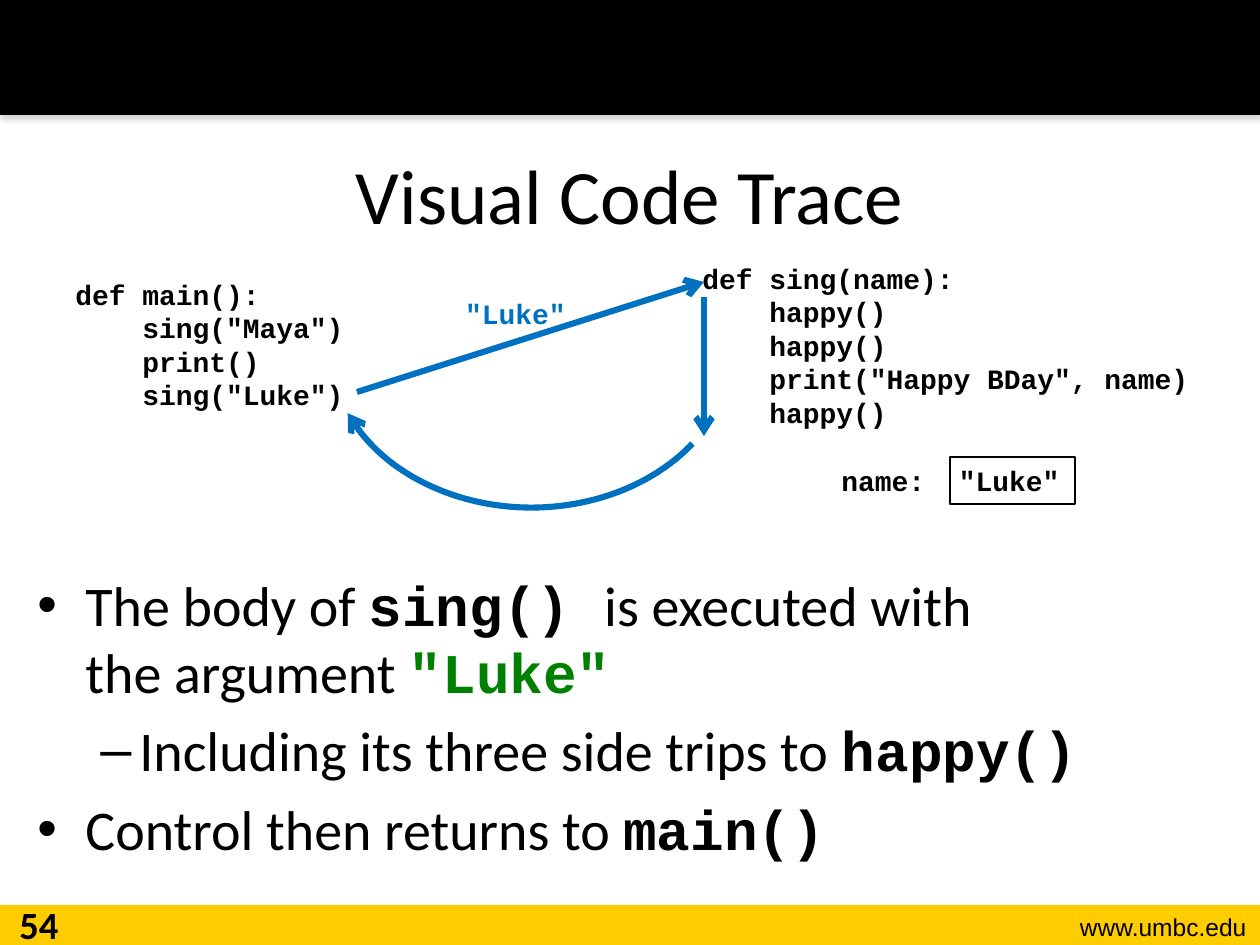
from dataclasses import dataclass
from typing import Any

from lxml.etree import SubElement
from pptx import Presentation
from pptx.dml.color import RGBColor
from pptx.enum.shapes import MSO_CONNECTOR, MSO_SHAPE
from pptx.enum.text import MSO_ANCHOR, PP_ALIGN
from pptx.oxml.ns import qn
from pptx.util import Emu, Pt

PX_PER_INCH = 126
BLACK, BLUE, GREEN, GOLD = "000000", "0070C0", "008000", "FFCC00"
CODE, PROSE = "Courier New", "Calibri"
Box = tuple[int, int, int, int]
Point = tuple[int, int]


@dataclass
class Label:
    """A text box whose lines share one style."""
    box: Box
    text: str
    size: int = 16
    font: str = CODE
    bold: bool = True
    color: str = BLACK
    align: PP_ALIGN = PP_ALIGN.LEFT
    anchor: MSO_ANCHOR = MSO_ANCHOR.TOP


@dataclass
class Span:
    """A stretch of bullet text, in prose or in code style."""
    text: str
    code: bool = False
    color: str = BLACK


@dataclass
class Bullet:
    """A bullet point with its level and spans."""
    level: int
    spans: list[Span]


LABELS = [
    Label((1008, 906, 251, 43), "www.umbc.edu", 14, "Arial", False, align=PP_ALIGN.RIGHT),
    Label((63, 115, 1134, 158), "Visual Code Trace", 44, PROSE, False,
          align=PP_ALIGN.CENTER, anchor=MSO_ANCHOR.MIDDLE),
    Label((0, 895, 78, 50), "54", 22, PROSE, align=PP_ALIGN.CENTER),
    Label((63, 271, 353, 149),
          'def main():\n    sing("Maya")\n    print()\n    sing("Luke")'),
    Label((690, 255, 559, 183),
          'def sing(name):\n    happy()\n    happy()\n'
          '    print("Happy BDay", name)\n    happy()'),
    Label((427, 290, 151, 47), '"Luke"', color=BLUE, align=PP_ALIGN.RIGHT),
]
NAME = Label((829, 457, 121, 47), "name:")
VALUE = Label((950, 457, 125, 47), '"Luke"', anchor=MSO_ANCHOR.MIDDLE)
CALLS = [((357, 392), (704, 282)), ((704, 297), (704, 436))]
BULLET_STYLES = [("•", 48, 48), ("–", 102, 39)]
BULLETS = [
    Bullet(0, [Span("The body of "), Span("sing() ", True),
               Span("is executed with\vthe argument "), Span('"Luke"', True, GREEN)]),
    Bullet(1, [Span("Including its three side trips to "), Span("happy()", True)]),
    Bullet(0, [Span("Control then returns to "), Span("main()", True)]),
]


def px(length: int) -> Emu:
    """Turn px into EMU."""
    return Emu(round(length * 914400 / PX_PER_INCH))


def rgb(value: str) -> RGBColor:
    """Turn a hex string into a colour."""
    return RGBColor.from_string(value)


def style_font(font: Any, name: str, size: int, bold: bool, color: str) -> None:
    """Set typeface, size, weight and colour."""
    font.name, font.size, font.bold = name, Pt(size), bold
    font.color.rgb = rgb(color)


def write_label(frame: Any, label: Label) -> None:
    """Fill a text frame with the lines of a label."""
    frame.word_wrap = True
    frame.vertical_anchor = label.anchor
    for index, line in enumerate(label.text.split("\n")):
        paragraph = frame.add_paragraph() if index else frame.paragraphs[0]
        paragraph.text = line
        paragraph.alignment = label.align
        style_font(paragraph.font, label.font, label.size, label.bold, label.color)


def add_label(shapes: Any, label: Label) -> None:
    """Add a label as a text box."""
    write_label(shapes.add_textbox(*map(px, label.box)).text_frame, label)


def add_band(shapes: Any, box: Box, color: str) -> Any:
    """Add a plain filled band."""
    band = shapes.add_shape(MSO_SHAPE.RECTANGLE, *map(px, box))
    band.shadow.inherit = False
    band.fill.solid()
    band.fill.fore_color.rgb = rgb(color)
    band.line.fill.background()
    return band


def add_soft_shadow(band: Any) -> None:
    """Cast a soft grey shadow below a band."""
    effects = band._element.spPr.find(qn("a:effectLst"))
    shadow = SubElement(effects, qn("a:outerShdw"), blurRad=str(Pt(3.1)),
                        dist=str(Pt(1.8)), dir="5400000", rotWithShape="0")
    grey = SubElement(shadow, qn("a:srgbClr"), val="808080")
    SubElement(grey, qn("a:alpha"), val="35000")


def style_arrow(line: Any) -> None:
    """Give a line the blue stroke and an open arrowhead."""
    line.width = Pt(3.5)
    line.color.rgb = rgb(BLUE)
    SubElement(line._get_or_add_ln(), qn("a:tailEnd"), type="arrow")


def add_arrow(shapes: Any, start: Point, end: Point) -> None:
    """Add a straight arrow."""
    arrow = shapes.add_connector(MSO_CONNECTOR.STRAIGHT, *map(px, start + end))
    style_arrow(arrow.line)
    SubElement(arrow._element.spPr, qn("a:effectLst"))


def add_return_arc(shapes: Any, box: Box) -> None:
    """Add the curved arrow that leads back to the caller."""
    arc = shapes.add_shape(MSO_SHAPE.ARC, *map(px, box))
    arc.rotation = 270
    arc.adjustments[0], arc.adjustments[1] = 72.71, 149.96
    arc.shadow.inherit = False
    arc.fill.background()
    style_arrow(arc.line)


def add_variable(shapes: Any, name: Label, value: Label) -> None:
    """Add a variable name grouped with its boxed value."""
    group = shapes.add_group_shape()
    add_label(group.shapes, name)
    cell = group.shapes.add_shape(MSO_SHAPE.RECTANGLE, *map(px, value.box))
    cell.shadow.inherit = False
    cell.fill.background()
    cell.line.color.rgb = rgb(BLACK)
    cell.line.width = Pt(0.75)
    cell.text_frame.margin_left = px(9)
    write_label(cell.text_frame, value)


def add_bullets(shapes: Any, box: Box, bullets: list[Bullet]) -> None:
    """Add the bulleted explanation."""
    frame = shapes.add_textbox(*map(px, box)).text_frame
    frame.word_wrap = True
    for index, bullet in enumerate(bullets):
        paragraph = frame.add_paragraph() if index else frame.paragraphs[0]
        paragraph.level = bullet.level
        mark, margin, hang = BULLET_STYLES[bullet.level]
        properties = paragraph._p.get_or_add_pPr()
        properties.set("marL", str(px(margin)))
        properties.set("indent", str(-px(hang)))
        SubElement(properties, qn("a:buFont"), typeface="Arial")
        SubElement(properties, qn("a:buChar"), char=mark)
        if index:
            paragraph.space_before = Pt(6.4)
        for span in bullet.spans:
            for part, text in enumerate(span.text.split("\v")):
                if part:
                    paragraph.add_line_break()
                run = paragraph.add_run()
                run.text = text
                style_font(run.font, CODE if span.code else PROSE, 32, span.code, span.color)


def main() -> None:
    """Build and save the slide."""
    deck = Presentation()
    deck.slide_width, deck.slide_height = px(1260), px(945)
    shapes = deck.slides.add_slide(deck.slide_layouts[6]).shapes
    add_band(shapes, (0, 905, 1260, 40), GOLD)
    add_soft_shadow(add_band(shapes, (0, 0, 1260, 115), BLACK))
    for label in LABELS:
        add_label(shapes, label)
    add_variable(shapes, NAME, VALUE)
    add_bullets(shapes, (25, 564, 1128, 311), BULLETS)
    for start, end in CALLS:
        add_arrow(shapes, start, end)
    add_return_arc(shapes, (370, 144, 323, 404))
    deck.save("out.pptx")


if __name__ == "__main__":
    main()
